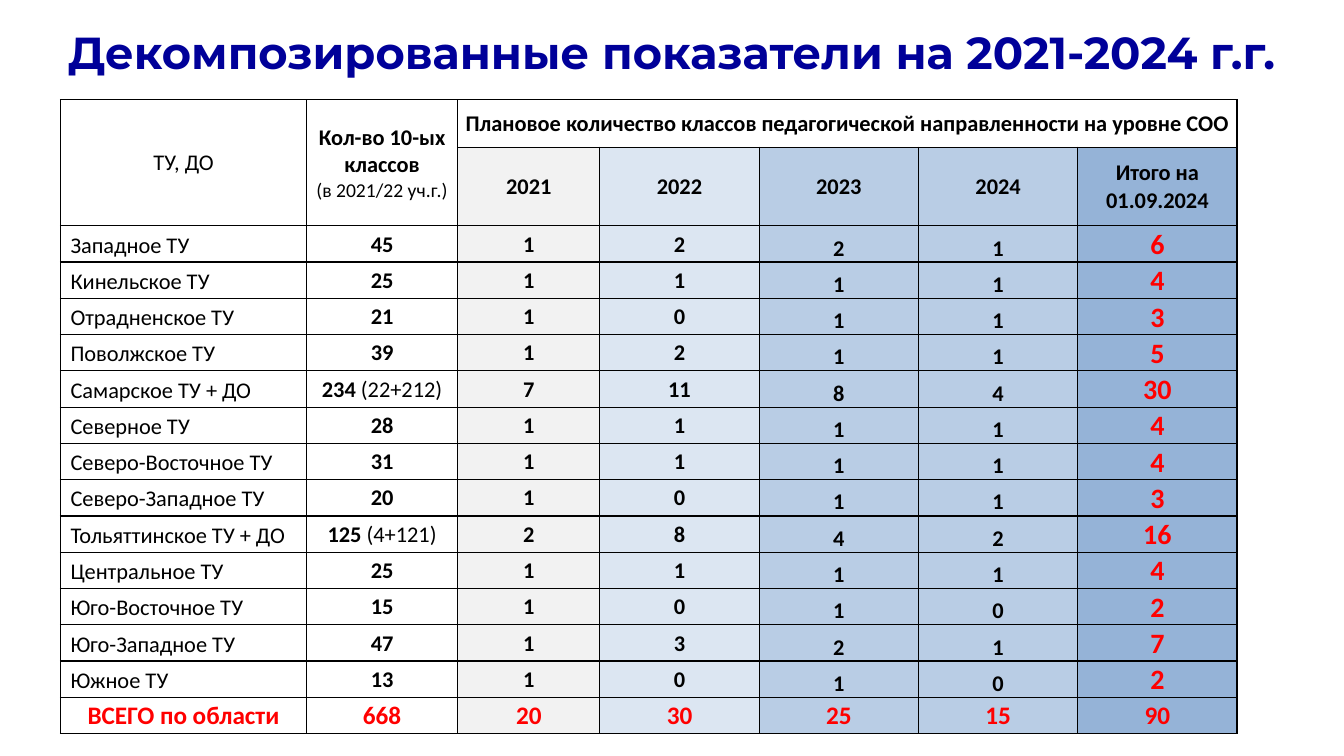
from lxml import etree
from pptx import Presentation
from pptx.dml.color import RGBColor
from pptx.enum.text import MSO_ANCHOR, PP_ALIGN
from pptx.oxml.ns import qn
from pptx.util import Inches, Pt

CENTER, LEFT = PP_ALIGN.CENTER, PP_ALIGN.LEFT
MIDDLE, BOTTOM = MSO_ANCHOR.MIDDLE, MSO_ANCHOR.BOTTOM

THEME = {
    "title_font": "Montserrat", "body_font": "Calibri",
    "title": "000099", "text": "000000", "accent": "FF0000", "border": "000000",
    "columns": ["FFFFFF", "FFFFFF", "F2F2F2", "DCE6F2", "B9CDE5", "B9CDE5", "95B3D7"],
    "title_size": 32, "body_size": 16, "note_size": 14, "sum_size": 20, "total_size": 18,
}

COLUMN_WIDTHS = [2.44, 1.5, 1.41, 1.58, 1.58, 1.58, 1.58]
HEADER_HEIGHTS = [0.47, 0.78]
ROW_HEIGHT = 0.36
YEARS = ["2021", "2022", "2023", "2024", "Итого на 01.09.2024"]

# Region, number of 10th grades, breakdown, plan for 2021-2024, sum
REGIONS = [
    ("Западное ТУ", "45", "", 1, 2, 2, 1, 6),
    ("Кинельское ТУ", "25", "", 1, 1, 1, 1, 4),
    ("Отрадненское ТУ", "21", "", 1, 0, 1, 1, 3),
    ("Поволжское ТУ", "39", "", 1, 2, 1, 1, 5),
    ("Самарское ТУ + ДО", "234", " (22+212)", 7, 11, 8, 4, 30),
    ("Северное ТУ", "28", "", 1, 1, 1, 1, 4),
    ("Северо-Восточное ТУ", "31", "", 1, 1, 1, 1, 4),
    ("Северо-Западное ТУ", "20", "", 1, 0, 1, 1, 3),
    ("Тольяттинское ТУ + ДО", "125", " (4+121)", 2, 8, 4, 2, 16),
    ("Центральное ТУ", "25", "", 1, 1, 1, 1, 4),
    ("Юго-Восточное ТУ", "15", "", 1, 0, 1, 0, 2),
    ("Юго-Западное ТУ", "47", "", 1, 3, 2, 1, 7),
    ("Южное ТУ", "13", "", 1, 0, 1, 0, 2),
]
TOTALS = ["ВСЕГО по области", 668, 20, 30, 25, 15, 90]


def add_text(paragraph, text, size="body_size", color="text", bold=True,
             font="body_font", align=CENTER):
    paragraph.alignment = align
    run = paragraph.add_run()
    run.text = str(text)
    run.font.color.rgb = RGBColor.from_string(THEME[color])
    formats = {"name": THEME[font], "size": Pt(THEME[size]), "bold": bold}
    for name, value in formats.items():
        setattr(run.font, name, value)


def style_cell(cell, fill):
    formats = {"margin_left": Inches(0.01), "margin_right": Inches(0.01),
               "margin_top": Inches(0.01), "margin_bottom": 0, "vertical_anchor": MIDDLE}
    for name, value in formats.items():
        setattr(cell, name, value)
    properties = cell._tc.get_or_add_tcPr()
    for side in ("a:lnL", "a:lnR", "a:lnT", "a:lnB"):
        line = etree.SubElement(properties, qn(side), w=str(Pt(1)))
        solid = etree.SubElement(line, qn("a:solidFill"))
        etree.SubElement(solid, qn("a:srgbClr"), val=THEME["border"])
    cell.fill.solid()
    cell.fill.fore_color.rgb = RGBColor.from_string(fill)


presentation = Presentation()
presentation.slide_width = Inches(13.33)
presentation.slide_height = Inches(7.5)
slide = presentation.slides.add_slide(presentation.slide_layouts[6])

# Title
title = slide.shapes.add_textbox(Inches(0.13), Inches(0.13), Inches(13.07), Inches(0.77))
title.text_frame.word_wrap = True
title.text_frame.vertical_anchor = MIDDLE
add_text(title.text_frame.paragraphs[0], "Декомпозированные показатели на 2021-2024 г.г.",
         "title_size", "title", font="title_font")

# Table grid
row_heights = HEADER_HEIGHTS + [ROW_HEIGHT] * (len(REGIONS) + 1)
table = slide.shapes.add_table(
    len(row_heights), len(COLUMN_WIDTHS), Inches(0.6), Inches(0.99),
    Inches(sum(COLUMN_WIDTHS)), Inches(sum(row_heights))).table
table.first_row = False
table.horz_banding = False
for column, width in zip(table.columns, COLUMN_WIDTHS):
    column.width = Inches(width)
for index, (row, height) in enumerate(zip(table.rows, row_heights)):
    row.height = Inches(height)
    for cell, fill in zip(row.cells, THEME["columns"]):
        style_cell(cell, THEME["columns"][0] if index == 0 else fill)

# Header
table.cell(0, 0).merge(table.cell(1, 0))
table.cell(0, 1).merge(table.cell(1, 1))
table.cell(0, 2).merge(table.cell(0, 6))
add_text(table.cell(0, 0).text_frame.paragraphs[0], "ТУ, ДО", bold=False)
count_frame = table.cell(0, 1).text_frame
add_text(count_frame.paragraphs[0], "Кол-во 10-ых классов")
add_text(count_frame.add_paragraph(), "(в 2021/22 уч.г.)", "note_size", bold=False)
add_text(table.cell(0, 2).text_frame.paragraphs[0],
         "Плановое количество классов педагогической направленности на уровне СОО")
for column, year in enumerate(YEARS, start=2):
    add_text(table.cell(1, column).text_frame.paragraphs[0], year)

# Regions
for row, (region, count, breakdown, *plan, region_sum) in enumerate(REGIONS, start=2):
    paragraph = table.cell(row, 0).text_frame.paragraphs[0]
    paragraph._p.get_or_add_pPr().set("marL", str(Inches(0.09)))
    paragraph.line_spacing = 1.07
    paragraph.space_after = Pt(8)
    add_text(paragraph, region, bold=False, align=LEFT)

    paragraph = table.cell(row, 1).text_frame.paragraphs[0]
    add_text(paragraph, count)
    if breakdown:
        add_text(paragraph, breakdown, bold=False)

    for column, value in enumerate(plan, start=2):
        add_text(table.cell(row, column).text_frame.paragraphs[0], value)
    add_text(table.cell(row, 6).text_frame.paragraphs[0], region_sum, "sum_size", "accent")
    for column in (4, 5, 6):
        table.cell(row, column).vertical_anchor = BOTTOM

# Totals
for cell, value in zip(table.rows[len(row_heights) - 1].cells, TOTALS):
    add_text(cell.text_frame.paragraphs[0], value, "total_size", "accent")

presentation.save("out.pptx")
